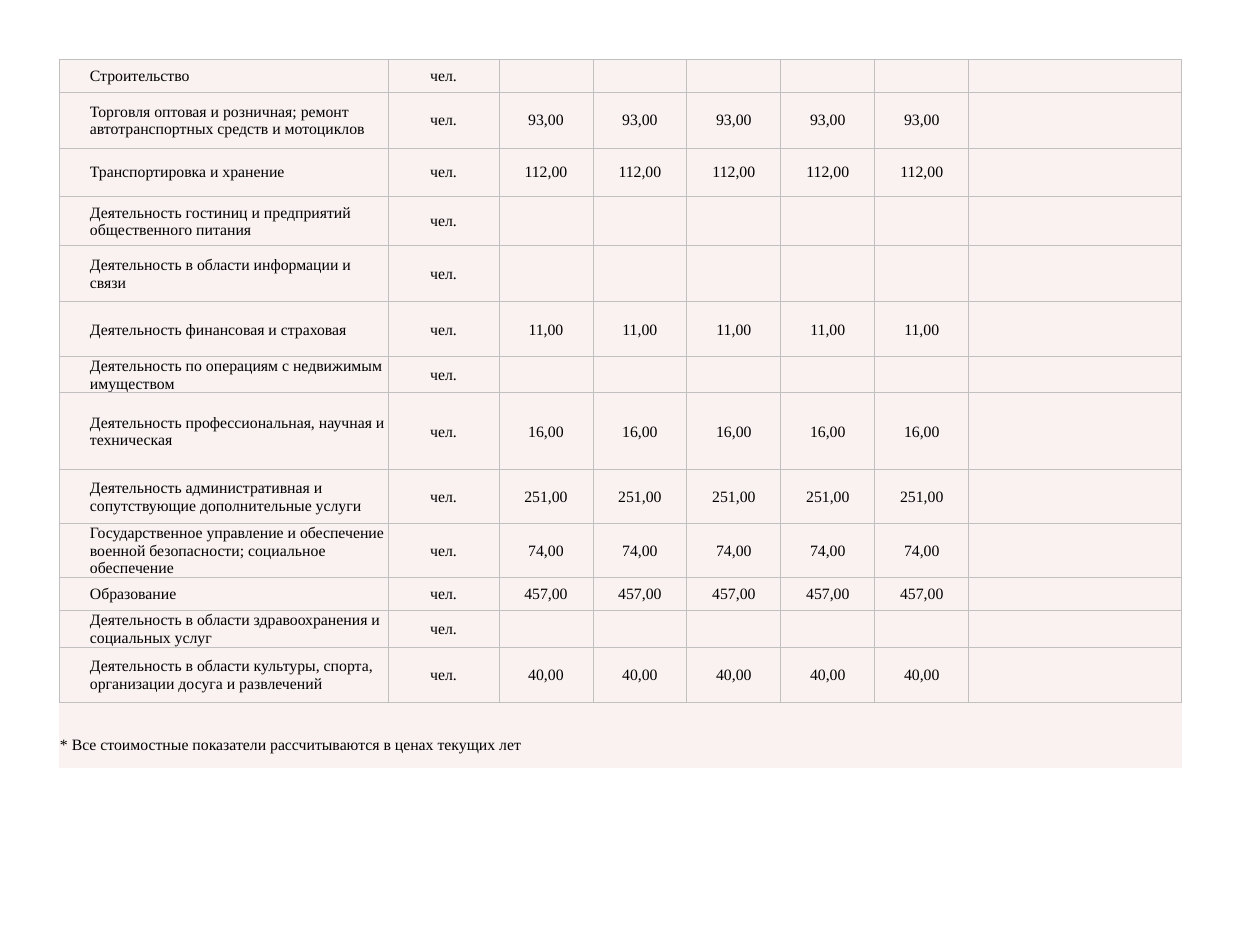
from lxml.etree import SubElement
from pptx import Presentation
from pptx.dml.color import RGBColor
from pptx.enum.text import MSO_ANCHOR, PP_ALIGN
from pptx.oxml import parse_xml
from pptx.oxml.ns import nsdecls, qn
from pptx.util import Pt


def px(n):
    return round(n * 914400 / 126)


def rgb(value):
    return RGBColor.from_string(value)


def assign(obj, values):
    for name, value in values.items():
        setattr(obj, name, value)


class Deck:
    font = {"name": "Times New Roman", "size": Pt(9)}
    ink, paper, grid = "000000", "FAF1F1", "C0C0C0"

    def __init__(self, width, height):
        self.prs = Presentation()
        assign(self.prs, {"slide_width": px(width), "slide_height": px(height)})
        self.s = self.prs.slides.add_slide(self.prs.slide_layouts[6])

    def table(self, left, top, cols, rows):
        frame = self.s.shapes.add_table(len(rows), len(cols), px(left), px(top),
                                        px(sum(cols)), px(sum(rows)))
        tbl = frame.table
        assign(tbl, {"first_row": False, "horz_banding": False})
        for col, width in zip(tbl.columns, cols):
            col.width = px(width)
        for row, height in zip(tbl.rows, rows):
            row.height = px(height)
        return tbl

    def borders(self, cell, sides):
        tc_pr = cell._tc.get_or_add_tcPr()
        for i, side in enumerate("LRTB"):
            paint = "<a:noFill/>"
            if side in sides:
                paint = f'<a:solidFill><a:srgbClr val="{self.grid}"/></a:solidFill>'
            tc_pr.insert(i, parse_xml(
                f'<a:ln{side} {nsdecls("a")} w="{Pt(0.5)}">{paint}</a:ln{side}>'))

    def cell(self, cell, text, sides, indent=1, align=PP_ALIGN.LEFT,
             anchor=MSO_ANCHOR.MIDDLE):
        assign(cell, {"margin_left": px(indent), "margin_right": px(1),
                      "margin_top": px(1), "margin_bottom": 0,
                      "vertical_anchor": anchor})
        cell.fill.solid()
        cell.fill.fore_color.rgb = rgb(self.paper)
        self.borders(cell, sides)
        p = cell.text_frame.paragraphs[0]
        p.alignment = align
        if text:
            r = p.add_run()
            r.text = text
            assign(r.font, self.font)
            r.font.color.rgb = rgb(self.ink)
        else:
            SubElement(p._p, qn("a:endParaRPr"), sz=str(int(self.font["size"].pt * 100)))


SECTORS = [
    ("Строительство", "", 33),
    ("Торговля оптовая и розничная; ремонт автотранспортных средств и мотоциклов", "93,00", 56),
    ("Транспортировка и хранение", "112,00", 48),
    ("Деятельность гостиниц и предприятий общественного питания", "", 50),
    ("Деятельность в области информации и связи", "", 56),
    ("Деятельность финансовая и страховая", "11,00", 55),
    ("Деятельность по операциям с недвижимым имуществом", "", 36),
    ("Деятельность профессиональная, научная и техническая", "16,00", 77),
    ("Деятельность административная и сопутствующие дополнительные услуги", "251,00", 54),
    ("Государственное управление и обеспечение военной безопасности; социальное обеспечение",
     "74,00", 53),
    ("Образование", "457,00", 33),
    ("Деятельность в области здравоохранения и социальных услуг", "", 37),
    ("Деятельность в области культуры, спорта, организации досуга и развлечений", "40,00", 55),
]
NOTE = "* Все стоимостные показатели рассчитываются в ценах текущих лет"
YEARS = 5
COLS = [329, 111] + [94] * YEARS + [213]


def main():
    deck = Deck(1260, 945)
    heights = [height for _, _, height in SECTORS] + [33, 33]
    tbl = deck.table(59, 59, COLS, heights)
    for i, (sector, value, _) in enumerate(SECTORS):
        deck.cell(tbl.cell(i, 0), sector, "LRTB", indent=31)
        for j, text in enumerate(["чел."] + [value] * YEARS + [""], 1):
            deck.cell(tbl.cell(i, j), text, "LRTB", align=PP_ALIGN.CENTER)
    gap = len(SECTORS)
    for j in range(len(COLS)):
        deck.cell(tbl.cell(gap, j), "", "T")
        deck.cell(tbl.cell(gap + 1, j), "" if j else NOTE, "", anchor=MSO_ANCHOR.TOP)
    tbl.cell(gap + 1, 0).merge(tbl.cell(gap + 1, 2))
    deck.prs.save("out.pptx")


if __name__ == "__main__":
    main()
